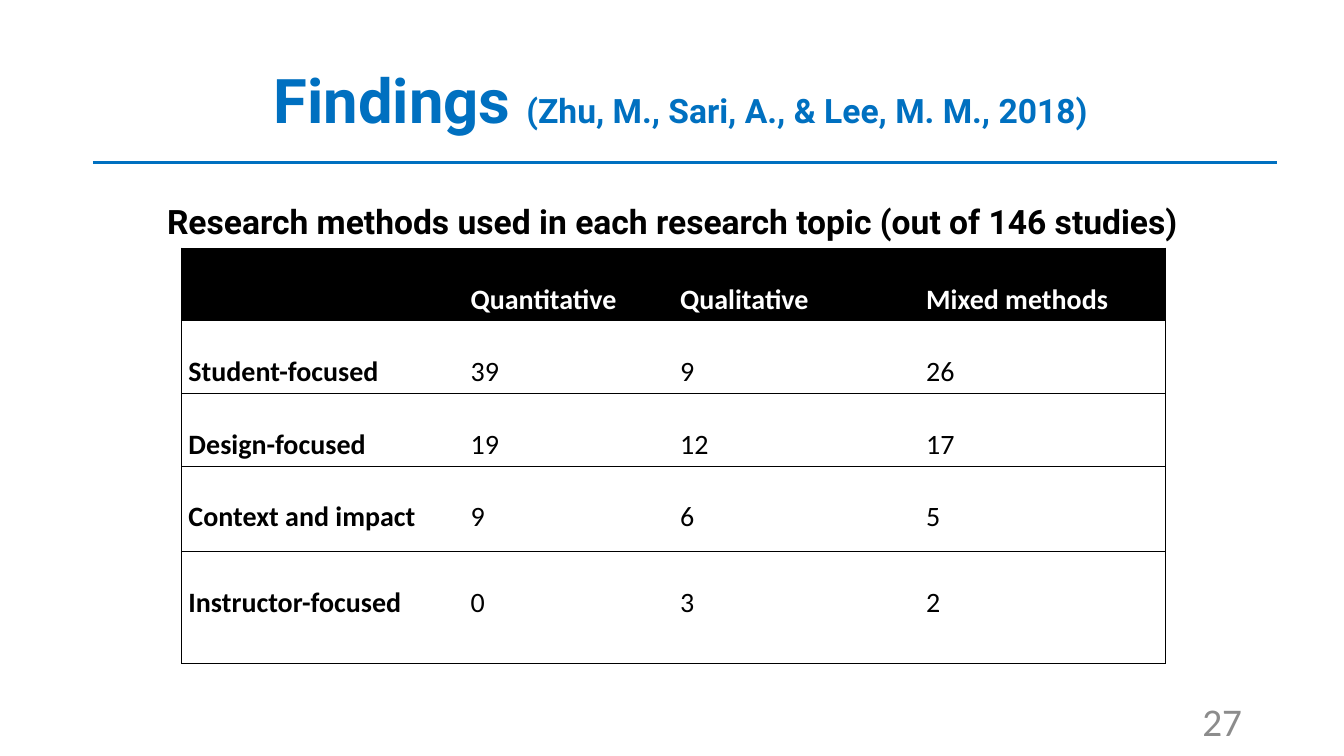
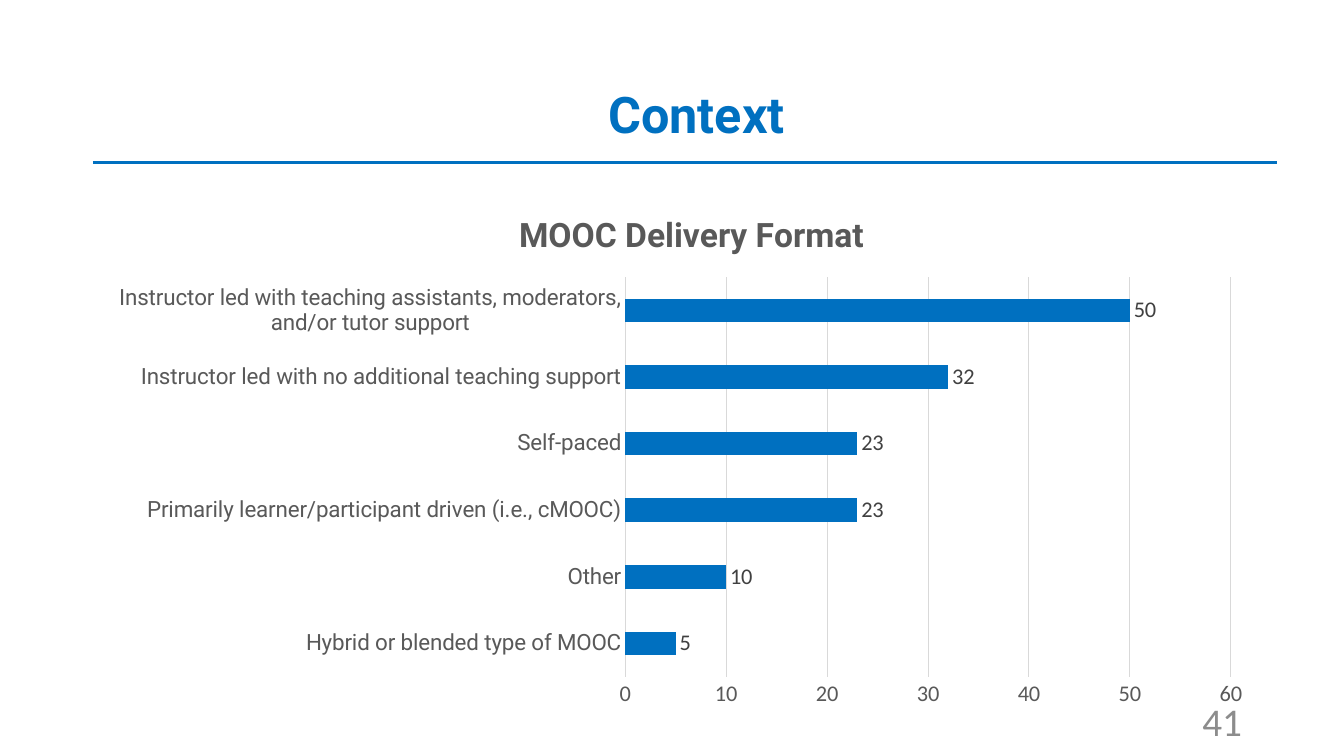
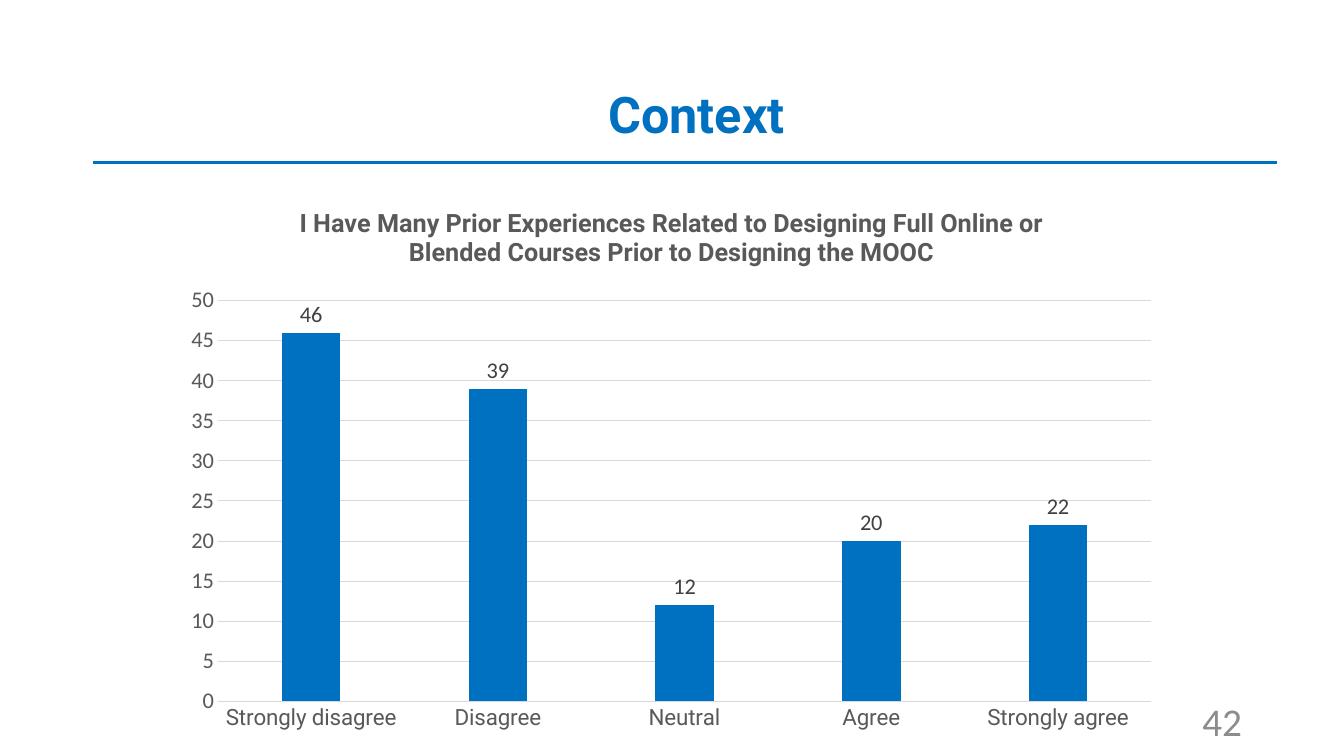
from lxml.etree import SubElement
from pptx import Presentation
from pptx.chart.data import CategoryChartData
from pptx.dml.color import RGBColor
from pptx.enum.chart import XL_CHART_TYPE, XL_LABEL_POSITION, XL_TICK_MARK
from pptx.enum.shapes import MSO_CONNECTOR
from pptx.enum.text import MSO_ANCHOR, PP_ALIGN
from pptx.oxml.ns import qn
from pptx.util import Cm, Pt

HEAD, BODY = "Roboto", "Calibri"
BLUE, BLACK, WHITE = "0070C0", "000000", "FFFFFF"
GREY, TEXT, LABEL, GRID = "8C8C8C", "595959", "404040", "D9D9D9"


def color(code):
    return RGBColor.from_string(code)


def style(font, size, code, name=BODY, bold=False):
    font.size, font.name, font.bold = Pt(size), name, bold
    font.color.rgb = color(code)


def write(para, text, *look):
    run = para.add_run()
    run.text = text
    style(run.font, *look)


def place(box):
    return [Cm(n) for n in box]


def add_text(slide, box, runs, align=PP_ALIGN.CENTER, space=None,
             anchor=MSO_ANCHOR.MIDDLE):
    """Add one paragraph made of runs: (text, size, color, font, bold)."""
    frame = slide.shapes.add_textbox(*place(box)).text_frame
    frame.word_wrap, frame.vertical_anchor = True, anchor
    para = frame.paragraphs[0]
    para.alignment, para.line_spacing = align, space
    for run in runs:
        write(para, *run)


def add_base(deck, number, box, *title):
    """Start a slide with its title, rule and page number."""
    slide = deck.slides.add_slide(deck.slide_layouts[6])
    runs = [(text, size, BLUE, HEAD, True) for text, size in title]
    add_text(slide, box, runs, space=0.9)
    rule = slide.shapes.add_connector(
        MSO_CONNECTOR.STRAIGHT, *place((2.34, 4.09, 32.18, 4.09)))
    rule.line.color.rgb, rule.line.width = color(BLUE), Pt(2)
    SubElement(rule._element.spPr, qn("a:effectLst"))
    add_text(slide, (23.93, 17.65, 7.62, 1.02), [(str(number), 28, GREY)],
             PP_ALIGN.RIGHT)
    return slide


def add_edges(cell, sides):
    """Draw thin black borders on the given sides and clear the others."""
    props = cell._tc.get_or_add_tcPr()
    for side in "LRTB":
        edge = SubElement(props, qn(f"a:ln{side}"), w=str(Pt(0.5)))
        if side in sides:
            fill = SubElement(edge, qn("a:solidFill"))
            SubElement(fill, qn("a:srgbClr"), val=BLACK)
        else:
            SubElement(edge, qn("a:noFill"))


def add_grid(slide, box, widths, heights, rows):
    table = slide.shapes.add_table(
        len(rows), len(widths), *place(box)).table
    table.first_row = table.horz_banding = False
    for col, width in zip(table.columns, widths):
        col.width = Cm(width)
    for row, height in zip(table.rows, heights):
        row.height = Cm(height)
    last = len(widths) - 1
    for i, row in enumerate(rows):
        for j, text in enumerate(row):
            cell = table.cell(i, j)
            cell.margin_left = cell.margin_right = Cm(0.18)
            cell.margin_top = cell.margin_bottom = 0
            add_edges(cell, "TB" + "L" * (j == 0) + "R" * (j == last))
            cell.fill.solid()
            cell.fill.fore_color.rgb = color(WHITE if i else BLACK)
            para = cell.text_frame.paragraphs[0]
            para.line_spacing = 2.0
            if text:
                write(para, text, 20, BLACK if i else WHITE, BODY,
                      i == 0 or j == 0)


def add_bars(slide, box, kind, title, size, data, gap, overlap=0):
    source = CategoryChartData(number_format="0")
    source.categories = list(data)
    source.add_series("Series 1", list(data.values()))
    chart = slide.shapes.add_chart(kind, *place(box), source).chart
    style(chart.font, 10, BLACK)
    chart.has_legend = False
    para = chart.chart_title.text_frame.paragraphs[0]
    write(para, title, size, TEXT, HEAD, True)
    chart.chart_title.include_in_layout = False

    cats, vals = chart.category_axis, chart.value_axis
    for axis, name in ((cats, HEAD), (vals, BODY)):
        axis.major_tick_mark = axis.minor_tick_mark = XL_TICK_MARK.NONE
        style(axis.tick_labels.font, 16, TEXT, name)
    vals.format.line.fill.background()
    for line in (cats.format.line, vals.major_gridlines.format.line):
        line.color.rgb, line.width = color(GRID), Pt(0.75)

    plot = chart.plots[0]
    plot.gap_width, plot.overlap = gap, overlap
    plot.vary_by_categories = False
    fill = plot.series[0].format.fill
    fill.solid()
    fill.fore_color.rgb = color(BLUE)
    plot.has_data_labels = True
    labels = plot.data_labels
    labels.show_value = True
    labels.position = XL_LABEL_POSITION.OUTSIDE_END
    style(labels.font, 16, LABEL)


def add_findings(deck):
    slide = add_base(deck, 27, (2.34, 1.12, 29.84, 2.97), ("Findings ", 44),
                     ("(Zhu, M., Sari, A., & Lee, M. M., 2018) ", 24))
    add_grid(slide, (4.57, 6.25, 24.79, 10.47), (7.11, 5.28, 6.2, 6.2),
             (1.83, 1.83, 1.83, 2.16, 2.82), (
                 ("", "Quantitative", "Qualitative", "Mixed methods"),
                 ("Student-focused", "39", "9", "26"),
                 ("Design-focused", "19", "12", "17"),
                 ("Context and impact", "9", "6", "5"),
                 ("Instructor-focused", "0", "3", "2")))
    topic = "Research methods used in each research topic (out of 146 studies)"
    add_text(slide, (2.34, 4.34, 29.21, 3.53),
             [(topic, 24, BLACK, HEAD, True)], space=1.6,
             anchor=MSO_ANCHOR.TOP)


def add_context(deck, number, *chart):
    slide = add_base(deck, number, (1.78, 1.12, 31.55, 3.68), ("Context", 36))
    add_bars(slide, *chart)


def main():
    deck = Presentation()
    deck.slide_width, deck.slide_height = Cm(33.87), Cm(19.05)
    add_findings(deck)
    add_context(
        deck, 41, (2.97, 4.8, 28.91, 13.31), XL_CHART_TYPE.BAR_CLUSTERED,
        "MOOC Delivery Format", 24, {
            "Hybrid or blended type of MOOC": 5,
            "Other": 10,
            "Primarily learner/participant driven (i.e., cMOOC)": 23,
            "Self-paced": 23,
            "Instructor led with no additional teaching support": 32,
            "Instructor led with teaching assistants, moderators, "
            "and/or tutor support": 50}, 182)
    add_context(
        deck, 42, (4.32, 4.67, 25.2, 14.02), XL_CHART_TYPE.COLUMN_CLUSTERED,
        "I Have Many Prior Experiences Related to Designing Full Online or "
        "Blended Courses Prior to Designing the MOOC", 18, {
            "Strongly disagree": 46, "Disagree": 39, "Neutral": 12,
            "Agree": 20, "Strongly agree": 22}, 219, -27)
    deck.save("out.pptx")


if __name__ == "__main__":
    main()
